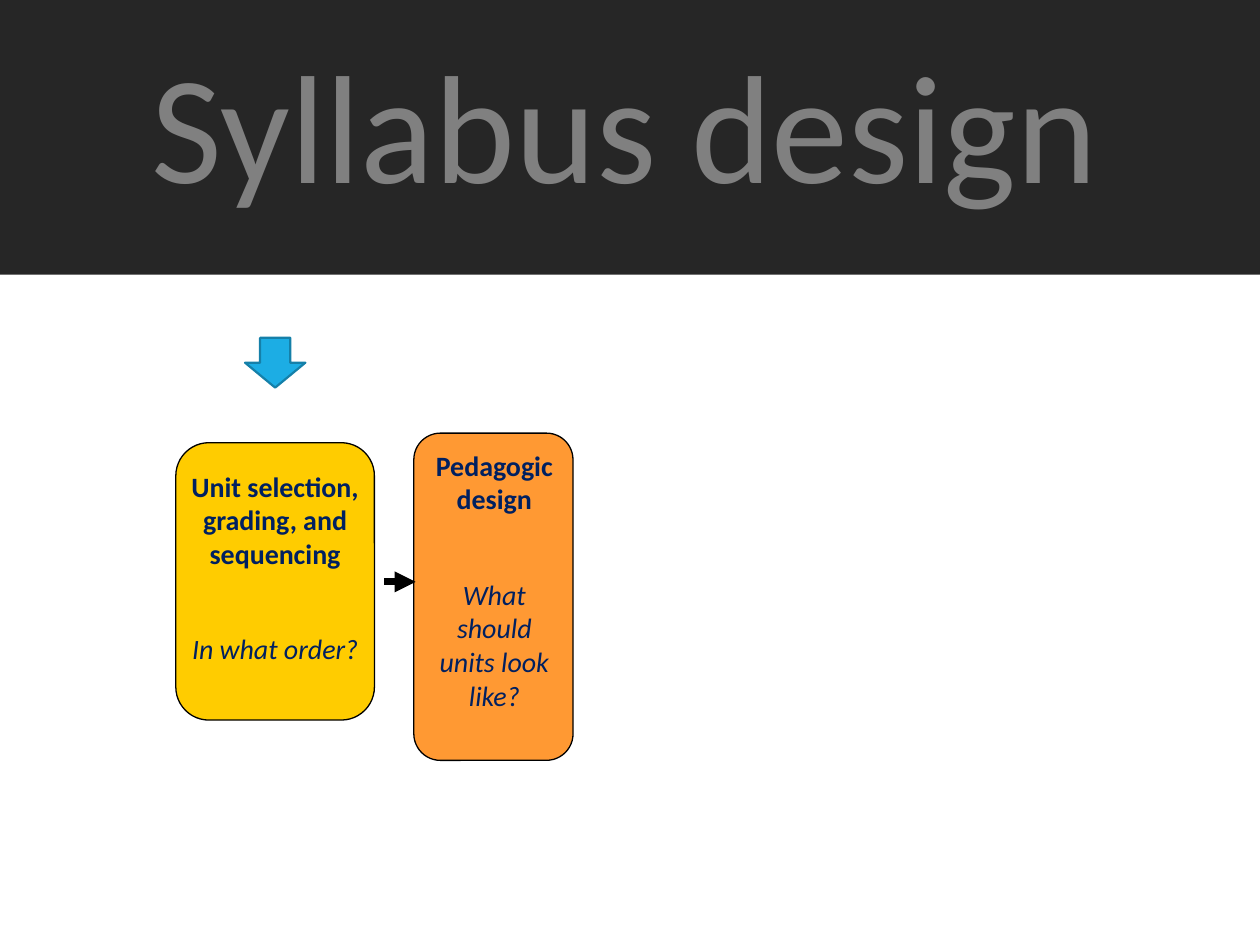
"""Build the syllabus design slide."""
from dataclasses import dataclass

from lxml.etree import SubElement
from pptx import Presentation
from pptx.dml.color import RGBColor
from pptx.enum.shapes import MSO_CONNECTOR as Link, MSO_SHAPE as Kind
from pptx.enum.text import MSO_ANCHOR as Anchor, MSO_AUTO_SIZE as Fit, PP_ALIGN as Align
from pptx.oxml.ns import qn
from pptx.shapes.autoshape import Shape
from pptx.slide import Slide
from pptx.util import Pt

DARK = RGBColor(0x26, 0x26, 0x26)
GREY = RGBColor(0x80, 0x80, 0x80)
NAVY = RGBColor(0x00, 0x20, 0x60)
BLACK = RGBColor(0x00, 0x00, 0x00)
GOLD = RGBColor(0xFF, 0xCC, 0x00)
ORANGE = RGBColor(0xFF, 0x99, 0x33)
BLUE = RGBColor(0x1C, 0xAD, 0xE4)
TEAL = RGBColor(0x15, 0x80, 0xA9)
FONT = "Calibri"


@dataclass(frozen=True)
class Box:
    left: float
    top: float
    width: float
    height: float

    def lengths(self) -> list[Pt]:
        return [Pt(n) for n in (self.left, self.top, self.width, self.height)]


@dataclass(frozen=True)
class Stage:
    card: Box
    label: Box
    fill: RGBColor
    name: str
    query: str


STAGES = (
    Stage(Box(100.5, 253, 113.5, 158.5), Box(95, 264.5, 124.5, 122.5), GOLD,
          "Unit selection, grading, and sequencing", "In what order?"),
    Stage(Box(236.5, 247.5, 91, 187), Box(236.5, 252.5, 92, 191.5), ORANGE,
          "Pedagogic design", "What should units look like?"),
)


def add_shape(slide: Slide, kind: Kind, box: Box, fill: RGBColor,
              edge: RGBColor | None = None, width: float = 0.75) -> Shape:
    """Draw a filled preset shape, outlined when an edge colour is given."""
    shape = slide.shapes.add_shape(kind, *box.lengths())
    shape.shadow.inherit = False
    shape.fill.solid()
    shape.fill.fore_color.rgb = fill
    if edge is None:
        shape.line.fill.background()
    else:
        shape.line.color.rgb = edge
        shape.line.width = Pt(width)
    return shape


def add_stage(slide: Slide, stage: Stage) -> None:
    """Draw a card with its bold name and italic question."""
    add_shape(slide, Kind.ROUNDED_RECTANGLE, stage.card, stage.fill, BLACK)
    frame = slide.shapes.add_textbox(*stage.label.lengths()).text_frame
    frame.word_wrap = True
    frame.text = f"{stage.name}\n{stage.query}"
    name, query = frame.paragraphs
    for para in (name, query):
        para.alignment = Align.CENTER
        font = para.runs[0].font
        font.name, font.size, font.color.rgb = FONT, Pt(16), NAVY
    name.runs[0].font.bold = True
    query.runs[0].font.italic = True
    query.space_before = Pt(35.5)


def add_arrow(slide: Slide, left: float, right: float, y: float) -> None:
    """Draw a thick level arrow pointing right."""
    arrow = slide.shapes.add_connector(Link.STRAIGHT, Pt(left), Pt(y), Pt(right), Pt(y))
    arrow.line.color.rgb = BLACK
    arrow.line.width = Pt(4)
    props = arrow.element.spPr
    SubElement(props.find(qn("a:ln")), qn("a:tailEnd"), type="triangle")
    SubElement(props, qn("a:effectLst"))


def add_title(slide: Slide, text: str) -> None:
    """Set the title over a dark band."""
    title = slide.shapes.title
    title.left, title.top, title.width, title.height = Box(51, 24.5, 612, 90).lengths()
    frame = title.text_frame
    frame.text = text
    frame.word_wrap = True
    frame.auto_size = Fit.NONE
    frame.vertical_anchor = Anchor.MIDDLE
    para = frame.paragraphs[0]
    para.alignment = Align.CENTER
    font = para.runs[0].font
    font.name, font.size, font.color.rgb = FONT, Pt(88), GREY
    band = add_shape(slide, Kind.RECTANGLE, Box(0, -1.5, 720.5, 158.5), DARK)
    title.element.addprevious(band.element)


def main() -> None:
    """Build and save the deck."""
    deck = Presentation()
    deck.slide_width, deck.slide_height = Pt(720), Pt(540)
    slide = deck.slides.add_slide(deck.slide_layouts[5])
    add_title(slide, "Syllabus design")
    for stage in STAGES:
        add_stage(slide, stage)
    add_arrow(slide, 219.5, 237.5, 332.5)
    add_shape(slide, Kind.DOWN_ARROW, Box(140, 193, 34.5, 28.5), BLUE, TEAL, 1.25)
    deck.save("out.pptx")


if __name__ == "__main__":
    main()
